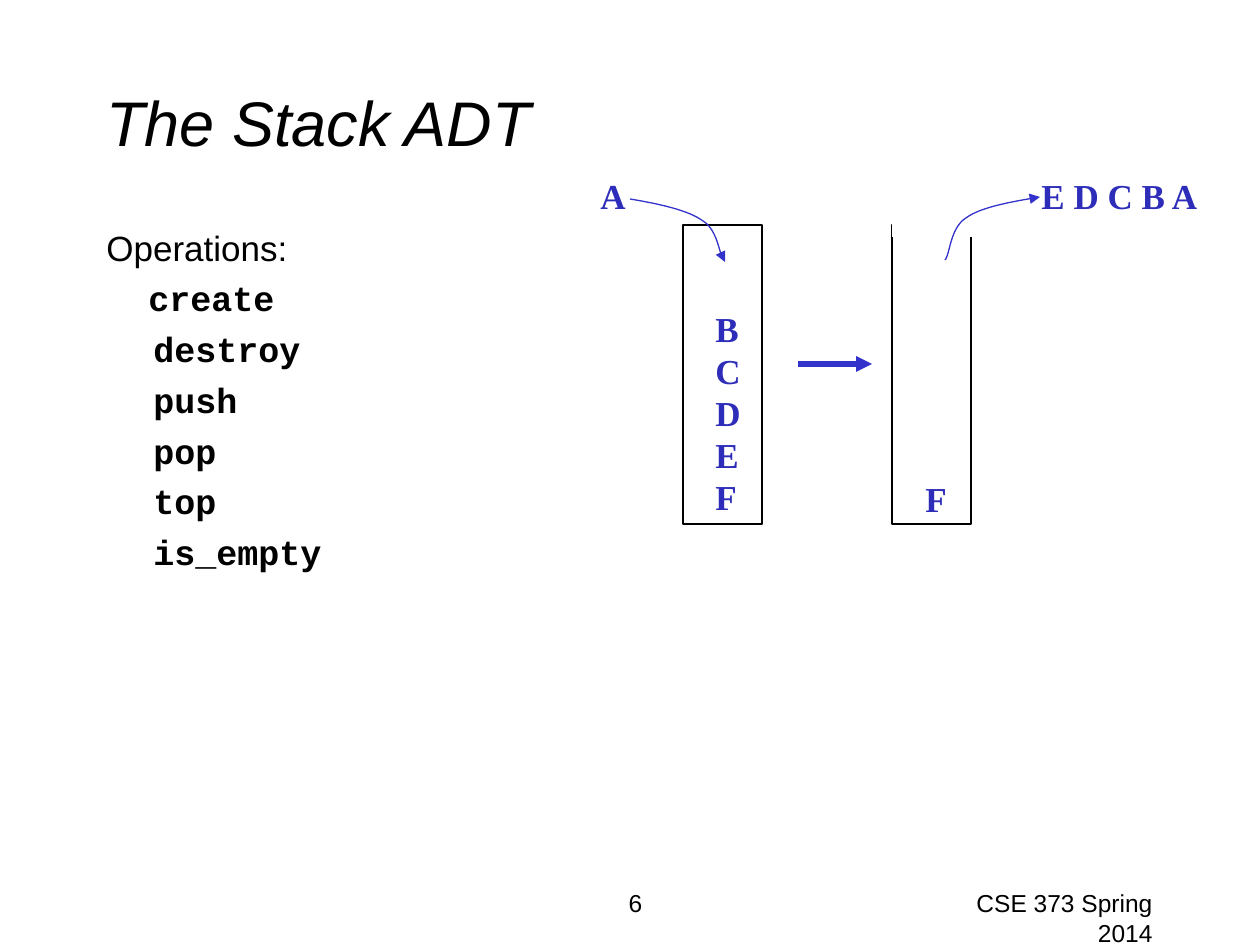
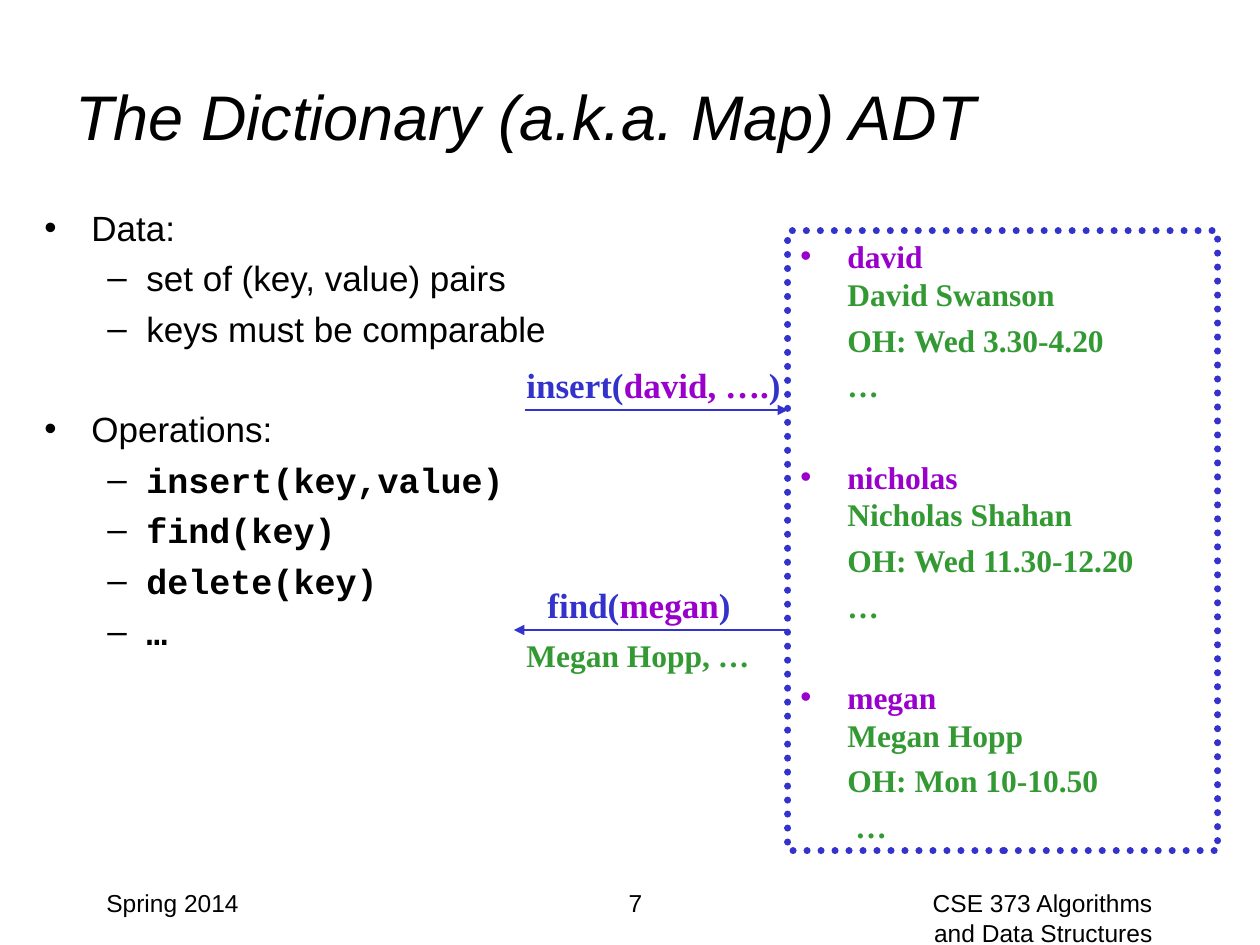
from dataclasses import dataclass

from lxml.etree import SubElement
from pptx import Presentation
from pptx.dml.color import RGBColor
from pptx.enum.dml import MSO_LINE
from pptx.enum.shapes import MSO_CONNECTOR, MSO_SHAPE
from pptx.enum.text import MSO_ANCHOR as ANCHOR, PP_ALIGN as ALIGN
from pptx.oxml.ns import qn
from pptx.util import Emu, Pt


@dataclass(frozen=True)
class Theme:
    black: str = "000000"
    white: str = "FFFFFF"
    blue: str = "3333CC"
    item: str = "2D2DB9"
    purple: str = "9900CC"
    green: str = "339933"
    sans: str = "Arial"
    mono: str = "Courier New"
    serif: str = "Times New Roman"
    title: int = 36
    body: int = 20
    entry: int = 18
    footer: int = 14
    thin: float = 0.75
    arrow: int = 3
    dots: int = 4


T = Theme()
SCALE = 914400 / 126  # EMU in one px
WIDTH, HEIGHT = 1260, 945

# Paragraph and run formats
CODE = dict(font=T.mono, bold=True)
ITEM = dict(font=T.serif, color=T.item, bold=True)
CALL = dict(font=T.serif, color=T.blue, bold=True)
ENTRY = dict(font=T.serif, color=T.green, bold=True, size=T.entry, before=4.5)
TOP = dict(left=47, indent=-47, bullet="•")
SUB = dict(left=102, indent=-39, bullet="–")
AFTER_GAP = 33
ENTRY_GAP = 30.5

# Footer: left, width, alignment of the date, number and course
FOOTER_TOP, FOOTER_HEIGHT = 882, 63
FOOTER_SLOTS = [(94, 262, ALIGN.LEFT), (399, 473, ALIGN.CENTER), (903, 262, ALIGN.RIGHT)]

# Stack slide
STACK = dict(
    title="The Stack ADT",
    title_box=(94, 42, 1071, 158),
    body_box=(94, 220, 1071, 620),
    footer=("", "6", "CSE 373 Spring 2014"),
    body=[("Operations:", {}), ("create", dict(CODE, left=42))]
    + [(name, dict(CODE, left=47)) for name in ("destroy", "push", "pop", "top", "is_empty")],
)
TUBES = [(683, 225, 79, 299), (892, 225, 79, 299)]
TUBE_MOUTH = (892, 220, 84, 17)
STACK_LABELS = [
    ((588, 168, 52, 55), ["A"]),
    ((703, 300, 50, 224), list("BCDEF")),
    ((1029, 168, 181, 55), ["E D C B A"]),
    ((913, 268, 45, 258), ["F"]),
]
PUSH_CURVE = [(630, 199), (659, 204), (688, 210), (703, 221), (719, 231), (719, 257), (725, 262)]
POP_CURVE = [(945, 260), (950, 255), (950, 228), (966, 218), (981, 207), (1011, 202), (1040, 197)]
STEP_ARROW = (798, 364, 872, 364)

# Dictionary slide
DICTIONARY = dict(
    title="The Dictionary (a.k.a. Map) ADT",
    title_box=(63, 63, 1071, 105),
    body_box=(32, 200, 546, 683),
    footer=("Spring 2014", "7", "CSE 373 Algorithms and Data Structures"),
    body=[
        ("Data:", TOP),
        ("set of (key, value) pairs", SUB),
        ("keys must be comparable", SUB),
        ("Operations:", dict(TOP, before=AFTER_GAP)),
    ]
    + [(text, SUB | CODE) for text in ("insert(key,value)", "find(key)", "delete(key)", "…")],
)
STORE_BOX = (788, 231, 430, 620)
# key, value, office hours, indent of the ellipsis
ENTRIES = [
    ("david", "David Swanson", "OH: Wed 3.30-4.20", 47),
    ("nicholas", "Nicholas Shahan", "OH: Wed 11.30-12.20", 47),
    ("megan", "Megan Hopp", "OH: Mon 10-10.50", 55),
]
CALLS = [
    ((514, 357, 282, 55), "insert(", "david, ….", ")", (525, 410, 788, 410)),
    ((535, 577, 210, 55), "find(", "megan", ")", (788, 630, 514, 630)),
]
RESULT_BOX, RESULT = (514, 630, 336, 50), "Megan Hopp, …"


def px(n):
    return Emu(round(n * SCALE))


def rgb(color):
    return RGBColor.from_string(color)


def add_text(tf, runs, size=T.body, font=T.sans, color=T.black, bold=False, italic=False,
             align=ALIGN.LEFT, before=0, left=0, indent=0, bullet=None):
    """Add one paragraph; runs is a string or a list of (text, colour)."""
    p = tf.paragraphs[0]
    if p.runs:
        p = tf.add_paragraph()
    p.alignment, p.space_before = align, Pt(before)
    pPr = p._p.get_or_add_pPr()
    pPr.set("marL", str(px(left)))
    pPr.set("indent", str(px(indent)))
    if bullet:
        SubElement(pPr, qn("a:buFont"), typeface=T.sans)
        SubElement(pPr, qn("a:buChar"), char=bullet)
    for text, run_color in [(runs, color)] if isinstance(runs, str) else runs:
        if text == "\n":
            p.add_line_break()
            continue
        r = p.add_run()
        r.text = text
        f = r.font
        f.size, f.name, f.bold, f.italic = Pt(size), font, bold, italic
        f.color.rgb = rgb(run_color)


def add_box(slide, box, wrap=True, anchor=ANCHOR.TOP):
    tf = slide.shapes.add_textbox(*map(px, box)).text_frame
    tf.word_wrap, tf.vertical_anchor = wrap, anchor
    return tf


def style_line(sp, color, width, arrow=False):
    sp.line.color.rgb = rgb(color)
    sp.line.width = Pt(width)
    if arrow:
        SubElement(sp._element.spPr.find(qn("a:ln")), qn("a:tailEnd"), type="triangle")


def add_rect(slide, box, fill=None, line=None, width=T.thin):
    sp = slide.shapes.add_shape(MSO_SHAPE.RECTANGLE, *map(px, box))
    sp.shadow.inherit = False
    if fill:
        sp.fill.solid()
        sp.fill.fore_color.rgb = rgb(fill)
    else:
        sp.fill.background()
    if line:
        style_line(sp, line, width)
    else:
        sp.line.fill.background()
    return sp


def add_arrow(slide, ends, width=T.thin):
    sp = slide.shapes.add_connector(MSO_CONNECTOR.STRAIGHT, *map(px, ends))
    style_line(sp, T.blue, width, arrow=True)
    SubElement(sp._element.spPr, qn("a:effectLst"))


def bezier(a, b, c, d, t):
    u = 1 - t
    return tuple(px(u**3 * i + 3 * u * u * t * j + 3 * u * t * t * k + t**3 * m)
                 for i, j, k, m in zip(a, b, c, d))


def add_curve(slide, points, steps=16):
    """Draw an arrow along joined cubic curves that share their end points."""
    track = [bezier(*points[i:i + 4], n / steps)
             for i in range(0, len(points) - 1, 3) for n in range(1, steps + 1)]
    builder = slide.shapes.build_freeform(*map(px, points[0]))
    builder.add_line_segments(track, close=False)
    sp = builder.convert_to_shape()
    sp.shadow.inherit = False
    sp.fill.background()
    style_line(sp, T.blue, T.thin, arrow=True)


def add_page(prs, page):
    """Add a slide with its title, body and footer."""
    slide = prs.slides.add_slide(prs.slide_layouts[6])
    add_text(add_box(slide, page["title_box"], anchor=ANCHOR.MIDDLE), page["title"],
             size=T.title, italic=True)
    tf = add_box(slide, page["body_box"])
    for text, fmt in page["body"]:
        add_text(tf, text, **{"before": 5, **fmt})
    for text, (left, width, align) in zip(page["footer"], FOOTER_SLOTS):
        if text:
            tf = add_box(slide, (left, FOOTER_TOP, width, FOOTER_HEIGHT))
            add_text(tf, text, size=T.footer, align=align)
    return slide


def build_stack(prs):
    slide = add_page(prs, STACK)
    for tube in TUBES:
        add_rect(slide, tube, line=T.black)
    add_rect(slide, TUBE_MOUTH, fill=T.white)
    for box, letters in STACK_LABELS:
        tf = add_box(slide, box, wrap=False, anchor=ANCHOR.BOTTOM)
        for letter in letters:
            add_text(tf, letter, **ITEM)
    for curve in (PUSH_CURVE, POP_CURVE):
        add_curve(slide, curve)
    add_arrow(slide, STEP_ARROW, T.arrow)


def build_dictionary(prs):
    slide = add_page(prs, DICTIONARY)

    # Stored entries
    store = add_rect(slide, STORE_BOX, line=T.blue, width=T.dots)
    store.line.dash_style = MSO_LINE.ROUND_DOT
    store._element.spPr.find(qn("a:ln")).set("cap", "rnd")
    tf = store.text_frame
    tf.word_wrap, tf.vertical_anchor = True, ANCHOR.TOP
    for i, (key, value, hours, ellipsis_left) in enumerate(ENTRIES):
        head = ENTRY | TOP | (dict(before=ENTRY_GAP) if i else {})
        add_text(tf, [(key, T.purple), ("\n", T.green), (value, T.green)], **head)
        add_text(tf, hours, left=47, **ENTRY)
        add_text(tf, "…", left=ellipsis_left, **ENTRY)

    # Calls and result
    for box, start, argument, end, ends in CALLS:
        add_arrow(slide, ends)
        runs = [(start, T.blue), (argument, T.purple), (end, T.blue)]
        add_text(add_box(slide, box, wrap=False), runs, **CALL)
    add_text(add_box(slide, RESULT_BOX), RESULT, **dict(ENTRY, before=0))


def main():
    prs = Presentation()
    prs.slide_width, prs.slide_height = px(WIDTH), px(HEIGHT)
    build_stack(prs)
    build_dictionary(prs)
    prs.save("out.pptx")


if __name__ == "__main__":
    main()
